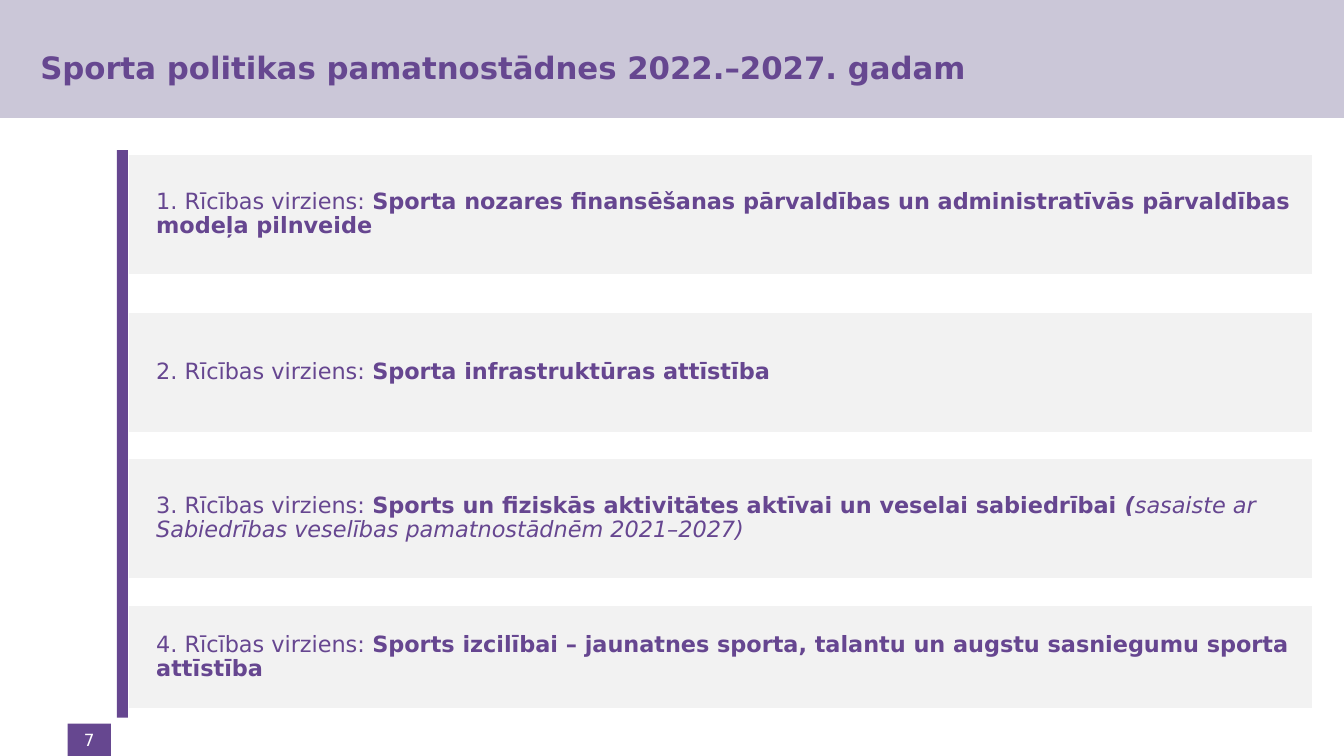
import pptx
import pptx.dml.color
import pptx.enum.shapes
import pptx.enum.text
import pptx.util

Inches = pptx.util.Inches
Pt = pptx.util.Pt
ALIGN = pptx.enum.text.PP_ALIGN

COLORS = {
    "band": "CBC7D8",
    "violet": "664790",
    "accent": "664690",
    "panel": "F2F2F2",
    "white": "FFFFFF",
}


def add_block(page, left, top, width, height, fill, line=None):
    box = page.shapes.add_shape(
        pptx.enum.shapes.MSO_SHAPE.RECTANGLE,
        Inches(left), Inches(top), Inches(width), Inches(height))
    box.shadow.inherit = False
    box.fill.solid()
    box.fill.fore_color.rgb = pptx.dml.color.RGBColor.from_string(COLORS[fill])
    if line:
        box.line.color.rgb = pptx.dml.color.RGBColor.from_string(COLORS[line])
        box.line.width = Pt(2)
    else:
        box.line.fill.background()
    return box


def write_text(box, spans, size, color, insets, para_format):
    frame = box.text_frame
    frame.word_wrap = True
    frame.vertical_anchor = pptx.enum.text.MSO_ANCHOR.MIDDLE
    for side, inset in zip(("left", "top", "right", "bottom"), insets):
        setattr(frame, f"margin_{side}", Inches(inset))
    para = frame.paragraphs[0]
    for name, value in para_format.items():
        setattr(para, name, value)
    for words, style in spans:
        span = para.add_run()
        span.text = words
        span.font.color.rgb = pptx.dml.color.RGBColor.from_string(COLORS[color])
        font_format = {"name": "DejaVu Sans", "size": Pt(size),
                       "bold": "b" in style, "italic": "i" in style}
        for name, value in font_format.items():
            setattr(span.font, name, value)


deck = pptx.Presentation()
deck.slide_width = Inches(13.33)
deck.slide_height = Inches(7.5)
page = deck.slides.add_slide(deck.slide_layouts[6])

add_block(page, 0, 0, 13.33, 1.17, "band")

title = page.shapes.add_textbox(Inches(0.4), Inches(0.04), Inches(12.15), Inches(1.25))
write_text(title, [("Sporta politikas pamatnostādnes 2022.–2027. gadam", "b")],
           22, "violet", (0, 0.05, 0.1, 0.05), {"alignment": ALIGN.LEFT})

number = add_block(page, 0.67, 7.18, 0.43, 0.32, "violet")
write_text(number, [("7", "")], 12, "white", (0.04, 0.04, 0.04, 0.04),
           {"alignment": ALIGN.CENTER})

directions = [
    (1.52, 1.21, [("Sporta nozares finansēšanas pārvaldības un administratīvās "
                   "pārvaldības modeļa pilnveide", "b")]),
    (3.09, 1.21, [("Sporta infrastruktūras attīstība", "b")]),
    (4.54, 1.21, [("Sports un fiziskās aktivitātes aktīvai un veselai sabiedrībai ", "b"),
                  ("(", "bi"),
                  ("sasaiste ar Sabiedrības veselības pamatnostādnēm 2021–2027)", "i")]),
    (6, 1.04, [("Sports izcilībai – jaunatnes sporta, talantu un augstu "
                "sasniegumu sporta attīstība", "b")]),
]
panel_format = {"alignment": ALIGN.LEFT, "line_spacing": 0.9, "space_after": Pt(5.6)}
for index, (top, height, spans) in enumerate(directions, start=1):
    panel = add_block(page, 1.27, top, 11.76, height, "panel", "white")
    write_text(panel, [(f"{index}. Rīcības virziens: ", "")] + spans,
               16, "accent", (0.28, 0.05, 0.09, 0.05), panel_format)

add_block(page, 1.16, 1.49, 0.11, 5.63, "accent")

deck.save("out.pptx")
